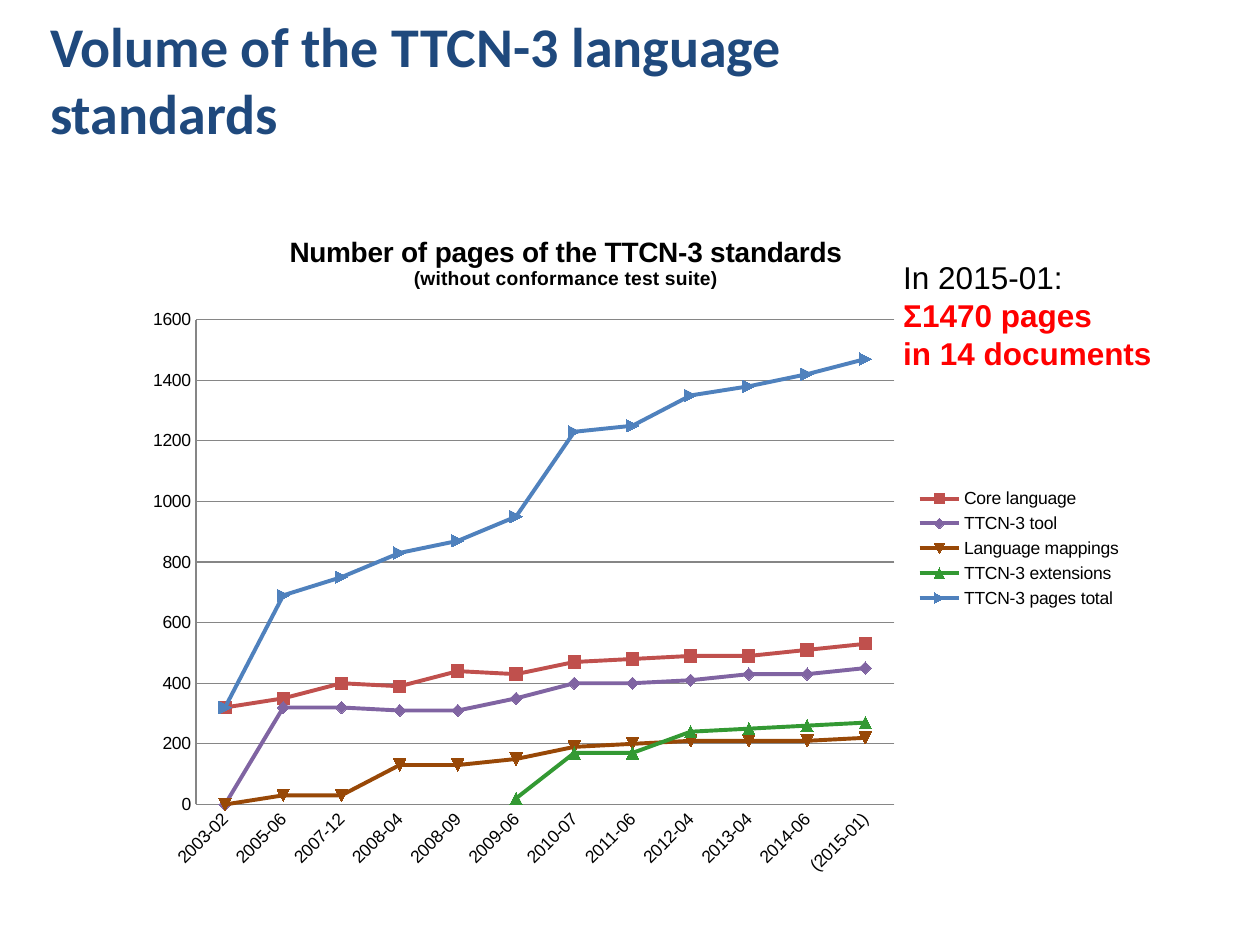
from dataclasses import dataclass
from typing import Optional

from lxml import etree
from pptx import Presentation
from pptx import util as u
from pptx.chart.data import CategoryChartData
from pptx.dml.color import RGBColor
from pptx.enum import chart as ch, text as tx
from pptx.oxml.ns import qn

NAVY = RGBColor(0x1F, 0x49, 0x7D)
BLACK = RGBColor(0, 0, 0)
RED = RGBColor(0xFF, 0, 0)
GREY = RGBColor(0x86, 0x86, 0x86)

DATES = ["2003-02", "2005-06", "2007-12", "2008-04", "2008-09", "2009-06",
         "2010-07", "2011-06", "2012-04", "2013-04", "2014-06", "(2015-01)"]


@dataclass
class Series:
    name: str
    color: RGBColor
    pages: list[Optional[int]]


@dataclass
class Style:
    font: str
    size: float
    color: RGBColor
    bold: bool = False


SERIES = [
    Series("Core language", RGBColor(0xC0, 0x50, 0x4D),
           [320, 350, 400, 390, 440, 430, 470, 480, 490, 490, 510, 530]),
    Series("TTCN-3 tool", RGBColor(0x80, 0x64, 0xA2),
           [0, 320, 320, 310, 310, 350, 400, 400, 410, 430, 430, 450]),
    Series("Language mappings", RGBColor(0x98, 0x48, 0x07),
           [0, 30, 30, 130, 130, 150, 190, 200, 210, 210, 210, 220]),
    Series("TTCN-3 extensions", RGBColor(0x33, 0x99, 0x33),
           [None] * 5 + [20, 170, 170, 240, 250, 260, 270]),
    Series("TTCN-3 pages total", RGBColor(0x4F, 0x81, 0xBD),
           [320, 690, 750, 830, 870, 950, 1230, 1250, 1350, 1380, 1420, 1470]),
]


def set_font(font, style: Style) -> None:
    font.name, font.size, font.bold = style.font, u.Pt(style.size), style.bold
    font.color.rgb = style.color


def add_text(slide, box: tuple, lines: list[tuple[str, Style]], wrap: bool):
    frame = slide.shapes.add_textbox(*map(u.Inches, box)).text_frame
    frame.word_wrap = wrap
    frame.vertical_anchor = tx.MSO_ANCHOR.MIDDLE if wrap else tx.MSO_ANCHOR.TOP
    for i, (line, style) in enumerate(lines):
        para = frame.add_paragraph() if i else frame.paragraphs[0]
        para.text = line
        for run in para.runs:
            set_font(run.font, style)
    return frame


def place(node, index: int, **parts: float) -> None:
    """Give a chart part a manual layout, in fractions of the chart."""
    for old in node.findall(qn("c:layout")):
        node.remove(old)
    layout = etree.Element(qn("c:layout"))
    manual = etree.SubElement(layout, qn("c:manualLayout"))
    if "w" in parts and index == 0:
        etree.SubElement(manual, qn("c:layoutTarget")).set("val", "inner")
    for side in "xy":
        etree.SubElement(manual, qn(f"c:{side}Mode")).set("val", "edge")
    for key, part in parts.items():
        etree.SubElement(manual, qn(f"c:{key}")).set("val", str(part))
    node.insert(index, layout)


def add_graph(slide) -> None:
    data = CategoryChartData()
    data.categories = DATES
    for item in SERIES:
        data.add_series(item.name, item.pages)
    box = map(u.Inches, (1.08, 1.67, 7.92, 5.42))
    chart = slide.shapes.add_chart(
        ch.XL_CHART_TYPE.LINE_MARKERS, *box, data).chart
    set_font(chart.font, Style("Arial", 10, BLACK))

    # Lines with automatic marker shapes
    plot = chart.plots[0]
    plot.vary_by_categories = False
    for line, item in zip(plot.series, SERIES):
        line.smooth = False
        line.format.line.width = u.Pt(2.25)
        line.format.line.color.rgb = item.color
        line.marker.size = 7
        line.marker.format.fill.solid()
        line.marker.format.fill.fore_color.rgb = item.color
        line.marker.format.line.color.rgb = item.color

    # Axes
    dates, pages = chart.category_axis, chart.value_axis
    for axis in (dates, pages):
        axis.major_tick_mark = axis.minor_tick_mark = ch.XL_TICK_MARK.NONE
        axis.format.line.color.rgb = GREY
        set_font(axis.tick_labels.font, Style("Arial", 10, BLACK))
    pages.minimum_scale, pages.maximum_scale, pages.major_unit = 0, 1600, 200
    pages.major_gridlines.format.line.color.rgb = GREY
    slant = dates._element.find(qn("c:txPr")).find(qn("a:bodyPr"))
    slant.set("rot", str(-45 * 60000))

    # Heading
    chart.has_title = True
    head = chart.chart_title
    frame = head.text_frame
    heads = [("Number of pages of the TTCN-3 standards", 16),
             ("(without conformance test suite)", 11)]
    for i, (words, size) in enumerate(heads):
        para = frame.add_paragraph() if i else frame.paragraphs[0]
        para.text = words
        set_font(para.runs[0].font, Style("Arial", size, BLACK, True))

    # Legend and layout
    chart.has_legend = True
    key = chart.legend
    key.position = ch.XL_LEGEND_POSITION.RIGHT
    key.include_in_layout = False
    set_font(key.font, Style("Arial", 10, BLACK))
    place(head._element, 1, x=0.15, y=0.03)
    place(key._element, 1, x=0.78, y=0.4, w=0.21, h=0.19)
    area = chart._chartSpace.find(qn("c:chart")).find(qn("c:plotArea"))
    place(area, 0, x=0.06, y=0.16, w=0.7, h=0.71)


def main() -> None:
    deck = Presentation()
    deck.slide_width, deck.slide_height = u.Inches(10), u.Inches(7.5)
    slide = deck.slides.add_slide(deck.slide_layouts[6])

    # Title
    add_text(slide, (0.3, 0, 9, 1.25),
             [("Volume of the TTCN-3 language\vstandards",
               Style("Calibri", 32, NAVY, True))], True)

    add_graph(slide)

    # Latest total
    note = add_text(slide, (7.07, 2, 2.19, 1.01),
                    [("In 2015-01:", Style("Arial", 18, BLACK)),
                     ("Σ1470 pages\vin 14 documents",
                      Style("Arial", 18, RED, True))], False)
    note.auto_size = tx.MSO_AUTO_SIZE.SHAPE_TO_FIT_TEXT

    deck.save("out.pptx")


if __name__ == "__main__":
    main()
